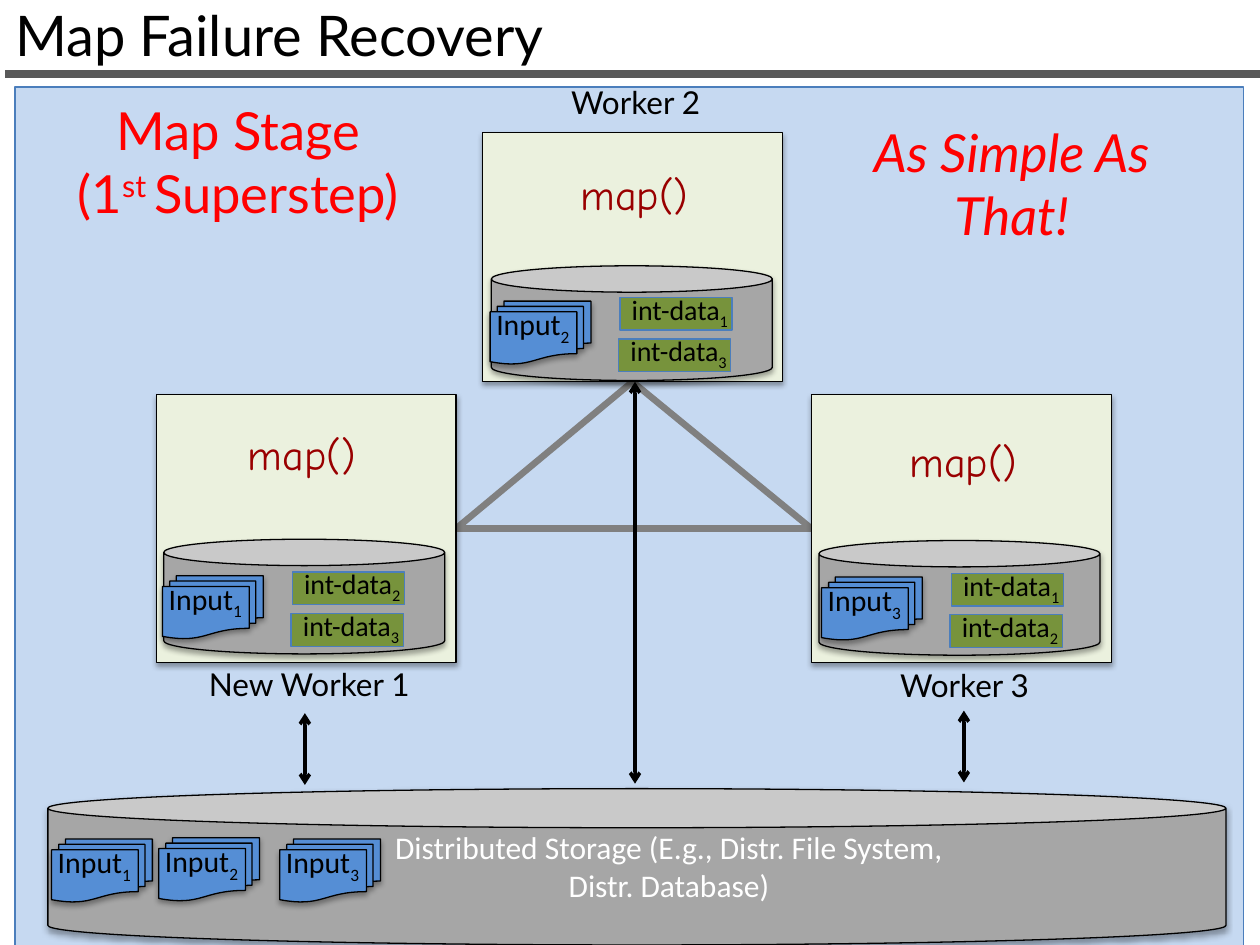
import pptx
import pptx.dml.color
import pptx.enum.shapes
import pptx.enum.text
import pptx.oxml
import pptx.oxml.ns
import pptx.util

RGBColor = pptx.dml.color.RGBColor
SHAPE = pptx.enum.shapes.MSO_SHAPE
ALIGN = pptx.enum.text.PP_ALIGN
ANCHOR = pptx.enum.text.MSO_ANCHOR
qn = pptx.oxml.ns.qn

BLACK = RGBColor(0x00, 0x00, 0x00)
WHITE = RGBColor(0xFF, 0xFF, 0xFF)
RED = RGBColor(0xFF, 0x00, 0x00)
MAROON = RGBColor(0x99, 0x00, 0x00)
PALE_BLUE = RGBColor(0xC6, 0xD9, 0xF1)
EDGE_BLUE = RGBColor(0x4B, 0x7E, 0xBC)
INPUT_BLUE = RGBColor(0x55, 0x8E, 0xD5)
PALE_GREEN = RGBColor(0xEB, 0xF1, 0xDE)
DATA_GREEN = RGBColor(0x77, 0x93, 0x3C)
STORE_GRAY = RGBColor(0xA6, 0xA6, 0xA6)
LINK_GRAY = RGBColor(0x80, 0x80, 0x80)
RULE_GRAY = RGBColor(0x59, 0x59, 0x59)

PX = 914400 // 100


def px(*lengths):
    return [pptx.util.Emu(length * PX) for length in lengths]


class Page:
    heading_font = "Lato"
    body_font = "Calibri"
    code_font = "Comic Neue"

    def __init__(self, deck):
        self.slide = deck.slides.add_slide(deck.slide_layouts[5])

    def style(self, span, size, color, font, italic=False):
        span.font.size = pptx.util.Pt(size)
        span.font.name = font
        span.font.color.rgb = color
        span.font.italic = italic

    def title(self, words, place):
        box = self.slide.shapes.title
        box.left, box.top, box.width, box.height = px(*place)
        frame = box.text_frame
        frame.text = words
        frame.word_wrap = True
        frame.vertical_anchor = ANCHOR.TOP
        para = frame.paragraphs[0]
        para.alignment = ALIGN.LEFT
        self.style(para.runs[0], 32, BLACK, self.heading_font)

    def text(self, lines, place, size, color, font, align=ALIGN.CENTER, italic=False):
        box = self.slide.shapes.add_textbox(*px(*place))
        frame = box.text_frame
        frame.word_wrap = True
        for index, spans in enumerate(lines):
            para = frame.paragraphs[0] if index == 0 else frame.add_paragraph()
            para.alignment = align
            for words, baseline in spans:
                span = para.add_run()
                span.text = words
                self.style(span, size, color, font, italic)
                if baseline:
                    span._r.get_or_add_rPr().set("baseline", str(baseline * 1000))

    def label(self, words, place, size, color, font, italic=False):
        self.text([[(words, 0)]], place, size, color, font, italic=italic)

    def shape(self, kind, place, fill, edge=BLACK, shadow=True):
        shape = self.slide.shapes.add_shape(kind, *px(*place))
        shape.fill.solid()
        shape.fill.fore_color.rgb = fill
        shape.line.color.rgb = edge
        shape.line.width = pptx.util.Pt(0.75)
        if not shadow:
            shape.shadow.inherit = False
        return shape

    def line(self, start, end, color, width, arrows=False):
        line = self.slide.shapes.add_connector(
            pptx.enum.shapes.MSO_CONNECTOR.STRAIGHT, *px(*start, *end))
        line.line.color.rgb = color
        line.line.width = pptx.util.Pt(width)
        properties = line._element.spPr
        if arrows:
            for tag in ("a:headEnd", "a:tailEnd"):
                tip = pptx.oxml.parse_xml(
                    f'<{tag} {pptx.oxml.ns.nsdecls("a")} type="arrow"/>')
                properties.find(qn("a:ln")).append(tip)
        properties.append(pptx.oxml.parse_xml(
            f'<a:effectLst {pptx.oxml.ns.nsdecls("a")}/>'))
        return line

    def input(self, number, left, top):
        self.shape(SHAPE.FLOWCHART_MULTIDOCUMENT, (left, top, 80, 50), INPUT_BLUE)
        self.text([[("Input", 0), (number, -25)]], (left - 5, top - 1, 91, 39),
                  17, BLACK, self.body_font, ALIGN.LEFT)

    def data(self, number, left, top):
        self.shape(SHAPE.RECTANGLE, (left, top, 89, 26), DATA_GREEN, EDGE_BLUE, False)
        self.text([[("int-data", 0), (number, -25)]], (left - 2, top - 9, 99, 37),
                  16, BLACK, self.body_font)

    def worker(self, name, name_place, frame, code, disk, document, number, held):
        self.label(name, name_place, 18, BLACK, self.heading_font)
        box = self.shape(SHAPE.RECTANGLE, frame, PALE_GREEN)
        self.label("map()", (*code, 135, 50), 24, MAROON, self.code_font)
        can = self.shape(SHAPE.CAN, (*disk, 223, 91), STORE_GRAY)
        can.adjustments[0] = 0.23
        left, top = document
        self.input(number, left, top)
        for row, source in enumerate(held):
            self.data(source, left + 103 - row, top - 3 + 33 * row)
        return box


def main():
    deck = pptx.Presentation()
    deck.slide_width, deck.slide_height = px(1000, 750)
    page = Page(deck)

    page.title("Map Failure Recovery", (2, -5, 1005, 66))
    page.shape(SHAPE.RECTANGLE, (12, 69, 975, 685), PALE_BLUE, EDGE_BLUE, False)
    page.shape(SHAPE.CAN, (38, 626, 935, 124), STORE_GRAY)
    page.line((4, 59), (1004, 59), RULE_GRAY, 4.5)

    apex, right, left = (504, 306), (644, 420), (362, 420)
    links = [page.line(start, end, LINK_GRAY, 3.75)
             for start, end in ((right, apex), (apex, left), (right, left))]

    third = page.worker("Worker 3", (679, 524, 173, 40), (644, 313, 238, 213),
                        (697, 341), (650, 429), (652, 458), "3", "12")
    first = page.worker("New Worker 1", (134, 523, 223, 40), (124, 313, 238, 213),
                        (172, 335), (130, 428), (129, 457), "1", "23")
    second = page.worker("Worker 2", (410, 61, 189, 40), (383, 105, 238, 198),
                         (436, 129), (390, 211), (389, 239), "2", "13")

    joins = (((third, 1), (second, 2)), ((second, 2), (first, 3)), ((third, 1), (first, 3)))
    for link, (start, end) in zip(links, joins):
        link.begin_connect(*start)
        link.end_connect(*end)

    for x, top, bottom in ((242, 566, 623), (765, 564, 621), (504, 303, 622)):
        page.line((x, top), (x, bottom), BLACK, 2, arrows=True)

    page.label("Distributed Storage (E.g., Distr. File System, Distr. Database)",
               (281, 652, 500, 71), 18, WHITE, page.body_font)
    for number, x, y in (("1", 41, 666), ("2", 126, 665), ("3", 222, 666)):
        page.input(number, x, y)

    page.text([[("Map Stage", 0)], [("(1", 0), ("st ", 30), ("Superstep)", 0)]],
              (30, 73, 318, 111), 30, RED, page.heading_font)
    page.label("As Simple As That!", (644, 90, 318, 111), 30, RED,
               page.heading_font, italic=True)

    deck.save("out.pptx")


if __name__ == "__main__":
    main()
